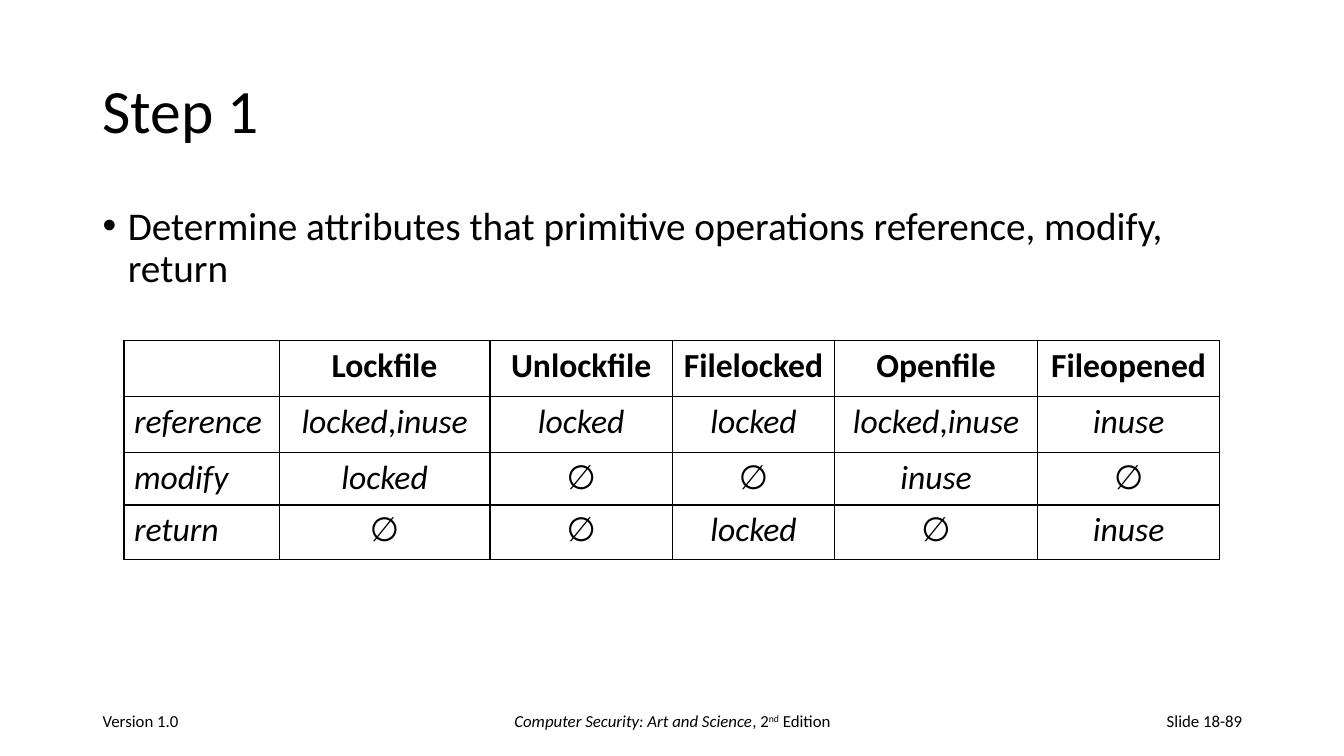
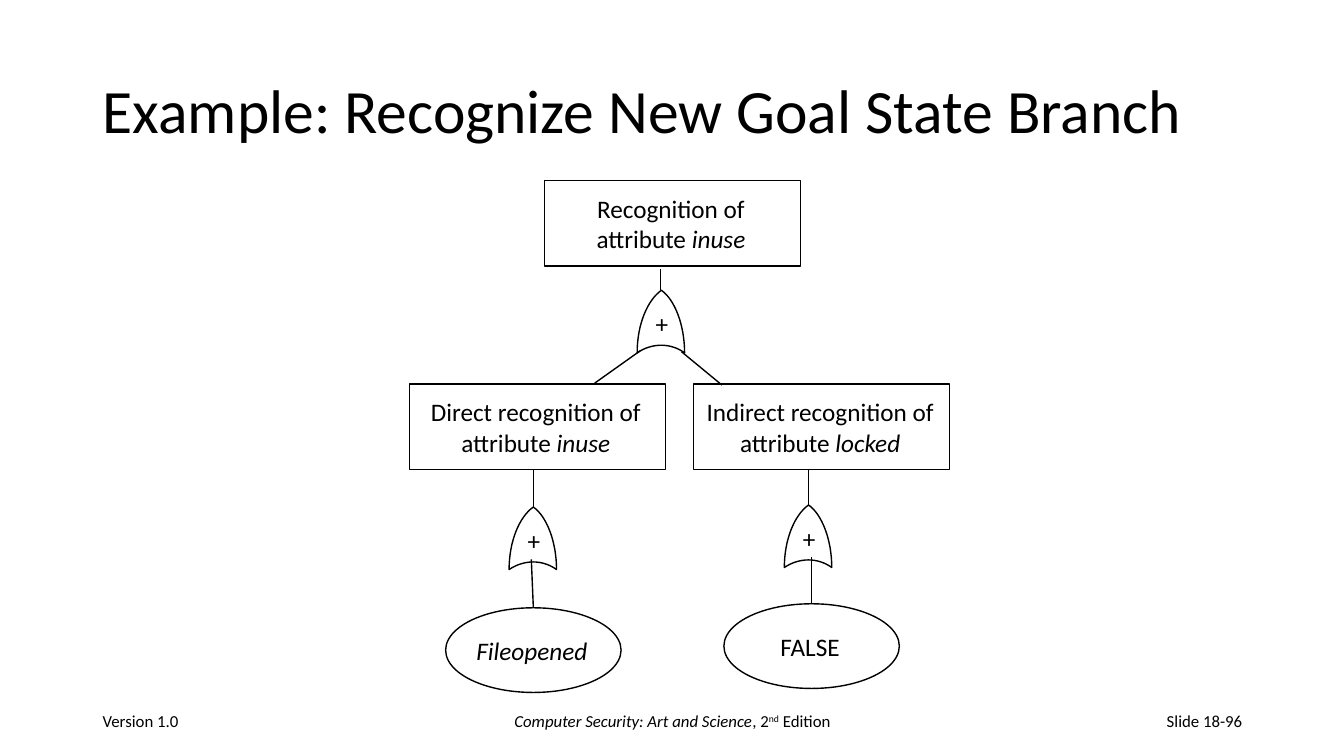
from lxml.etree import SubElement
from pptx import Presentation
from pptx.dml.color import RGBColor
from pptx.enum.shapes import MSO_CONNECTOR, MSO_SHAPE
from pptx.enum.text import MSO_ANCHOR, PP_ALIGN
from pptx.oxml.ns import qn
from pptx.util import Inches, Pt

COLORS = {"ink": "000000", "paper": "FFFFFF"}
FONT = "Calibri"
MARGIN = 0.92
CONTENT_WIDTH = 11.5
NODE_SIZE = (2.54, 0.85)
LEAF_SIZE = (1.74, 0.84)


def ink(name):
    return RGBColor.from_string(COLORS[name])


def write(frame, text, size=18, bold=False, align=PP_ALIGN.LEFT,
          anchor=MSO_ANCHOR.MIDDLE, spacing=None, bullet=None):
    """Fill a frame; *stars* mark italics and ^carets^ mark superscripts."""
    frame.word_wrap = True
    frame.vertical_anchor = anchor
    for index, line in enumerate(text.split("\n")):
        paragraph = frame.add_paragraph() if index else frame.paragraphs[0]
        paragraph.alignment = align
        if spacing:
            paragraph.line_spacing = spacing
        if bullet:
            properties = paragraph._p.get_or_add_pPr()
            properties.set("marL", str(Inches(0.25)))
            properties.set("indent", str(Inches(-0.25)))
            SubElement(properties, qn("a:buFont")).set("typeface", "Arial")
            SubElement(properties, qn("a:buChar")).set("char", bullet)
        for i, phrase in enumerate(line.split("*")):
            for j, piece in enumerate(phrase.split("^")):
                if piece:
                    run = paragraph.add_run()
                    run.text = piece
                    run.font.name, run.font.size = FONT, Pt(size)
                    run.font.bold, run.font.italic = bold, i % 2 == 1
                    run.font.color.rgb = ink("ink")
                    if j % 2:
                        run._r.get_or_add_rPr().set("baseline", "30000")


def add_label(slide, box, text, **style):
    label = slide.shapes.add_textbox(*map(Inches, box))
    write(label.text_frame, text, **style)


def outline(shape):
    shape.shadow.inherit = False
    shape.fill.background()
    shape.line.color.rgb = ink("ink")
    shape.line.width = Pt(1)


def add_node(slide, kind, box, text):
    node = slide.shapes.add_shape(kind, *map(Inches, box))
    outline(node)
    frame = node.text_frame
    frame.margin_left = 0
    frame.margin_right = Inches(0.03)
    write(frame, text, align=PP_ALIGN.CENTER)


def add_line(slide, start, end):
    line = slide.shapes.add_connector(
        MSO_CONNECTOR.STRAIGHT, *map(Inches, (*start, *end)))
    line.line.color.rgb = ink("ink")
    line.line.width = Pt(1)
    SubElement(line._element.spPr, qn("a:effectLst"))


def curve(start, first, second, end, steps=16):
    for step in range(1, steps + 1):
        t = step / steps
        weights = ((1 - t) ** 3, 3 * t * (1 - t) ** 2, 3 * t * t * (1 - t), t ** 3)
        yield tuple(sum(w * point[axis] for w, point in
                        zip(weights, (start, first, second, end)))
                    for axis in (0, 1))


def add_or_gate(slide, apex_x, apex_y):
    apex, right, left = (0, 0), (0.23, 0.62), (-0.24, 0.62)
    edge = [*curve(apex, (0.13, 0.09), (0.23, 0.34), right),
            *curve(right, (0.09, 0.52), (-0.09, 0.52), left),
            *curve(left, (-0.24, 0.34), (-0.14, 0.1), apex)]
    points = [(Inches(apex_x + x), Inches(apex_y + y)) for x, y in edge]
    builder = slide.shapes.build_freeform(Inches(apex_x), Inches(apex_y))
    builder.add_line_segments(points, close=True)
    outline(builder.convert_to_shape())
    add_label(slide, (apex_x - 0.17, apex_y + 0.13, 0.35, 0.4), "+",
              align=PP_ALIGN.CENTER)


def add_base_slide(deck, title, number):
    slide = deck.slides.add_slide(deck.slide_layouts[6])
    slide.background.fill.solid()
    slide.background.fill.fore_color.rgb = ink("paper")
    add_label(slide, (MARGIN, 0.4, CONTENT_WIDTH, 1.45), title,
              size=44, spacing=0.9)
    footer = (
        (MARGIN, 3, "Version 1.0", PP_ALIGN.LEFT),
        (4.42, 4.5, "*Computer Security: Art and Science*, 2^nd^ Edition",
         PP_ALIGN.CENTER),
        (9.42, 3, f"Slide 18-{number}", PP_ALIGN.RIGHT),
    )
    for left, width, text, align in footer:
        add_label(slide, (left, 6.95, width, 0.4), text, size=12, align=align)
    return slide


def border_cell(cell):
    properties = cell._tc.get_or_add_tcPr()
    for index, side in enumerate(("a:lnL", "a:lnR", "a:lnT", "a:lnB")):
        border = properties.makeelement(qn(side), {"w": str(Pt(1))})
        fill = SubElement(border, qn("a:solidFill"))
        SubElement(fill, qn("a:srgbClr")).set("val", COLORS["ink"])
        properties.insert(index, border)


def add_attribute_table(slide, left, top):
    widths = (1.54, 2.09, 1.81, 1.61, 2.01, 1.81)
    heights = (0.55, 0.56, 0.52, 0.54)
    rows = (
        ("", "Lockfile", "Unlockfile", "Filelocked", "Openfile", "Fileopened"),
        ("*reference*", "*locked*,*inuse*", "*locked*", "*locked*",
         "*locked*,*inuse*", "*inuse*"),
        ("*modify*", "*locked*", "∅", "∅", "*inuse*", "∅"),
        ("*return*", "∅", "∅", "*locked*", "∅", "*inuse*"),
    )
    table = slide.shapes.add_table(
        len(rows), len(widths), Inches(left), Inches(top),
        Inches(sum(widths)), Inches(sum(heights))).table
    table.first_row = table.horz_banding = False
    for column, width in zip(table.columns, widths):
        column.width = Inches(width)
    for r, (row, height) in enumerate(zip(rows, heights)):
        table.rows[r].height = Inches(height)
        for c, text in enumerate(row):
            cell = table.cell(r, c)
            cell.fill.background()
            border_cell(cell)
            write(cell.text_frame, text, size=24, bold=r == 0,
                  align=PP_ALIGN.CENTER if c else PP_ALIGN.LEFT,
                  anchor=MSO_ANCHOR.TOP)


def add_goal_tree(slide, left, top):
    def at(x, y):
        return left + x, top + y

    add_node(slide, MSO_SHAPE.RECTANGLE, (*at(1.34, 0), *NODE_SIZE),
             "Recognition of\nattribute *inuse*")
    add_line(slide, at(2.49, 0.88), at(2.49, 1.09))
    add_or_gate(slide, *at(2.5, 1.09))
    add_line(slide, at(2.29, 1.69), at(1.84, 2.01))
    add_line(slide, at(2.7, 1.7), at(3.1, 2.03))

    branches = (
        (0, "Direct recognition of\nattribute *inuse*",
         (1.23, 3.24), 1.21, (0.36, 4.24), "*Fileopened*"),
        (2.82, "Indirect recognition of\nattribute *locked*",
         (3.96, 3.22), 3.99, (3.12, 4.2), "FALSE"),
    )
    node_top = 2.02
    for node_x, goal, gate, leaf_stem_x, leaf, outcome in branches:
        gate_x, gate_y = gate
        add_node(slide, MSO_SHAPE.RECTANGLE,
                 (*at(node_x, node_top), *NODE_SIZE), goal)
        add_line(slide, at(gate_x, node_top + NODE_SIZE[1]), at(*gate))
        add_or_gate(slide, *at(*gate))
        add_line(slide, at(leaf_stem_x, gate_y + 0.52),
                 at(leaf[0] + LEAF_SIZE[0] / 2, leaf[1]))
        add_node(slide, MSO_SHAPE.OVAL, (*at(*leaf), *LEAF_SIZE), outcome)


def add_step_slide(deck):
    slide = add_base_slide(deck, "Step 1", 89)
    add_label(slide, (MARGIN, 2, CONTENT_WIDTH, 1.1),
              "Determine attributes that primitive operations reference, "
              "modify, return",
              size=28, anchor=MSO_ANCHOR.TOP, spacing=0.9, bullet="•")
    add_attribute_table(slide, 1.23, 3.38)


def add_branch_slide(deck):
    slide = add_base_slide(deck, "Example: Recognize New Goal State Branch", 96)
    add_goal_tree(slide, 4.06, 1.79)


def main():
    deck = Presentation()
    deck.slide_width, deck.slide_height = Inches(13.33), Inches(7.5)
    add_step_slide(deck)
    add_branch_slide(deck)
    deck.save("out.pptx")


if __name__ == "__main__":
    main()
